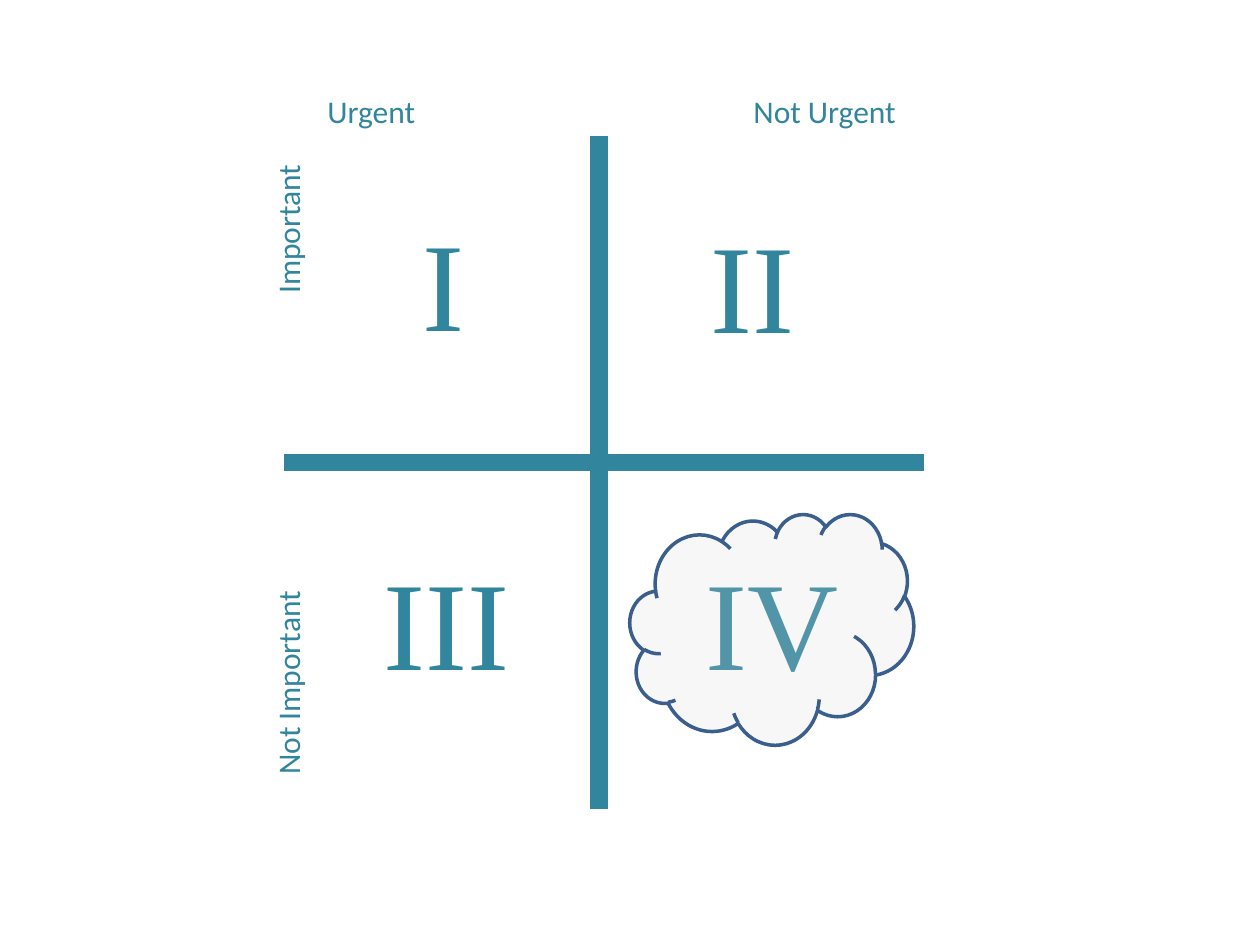
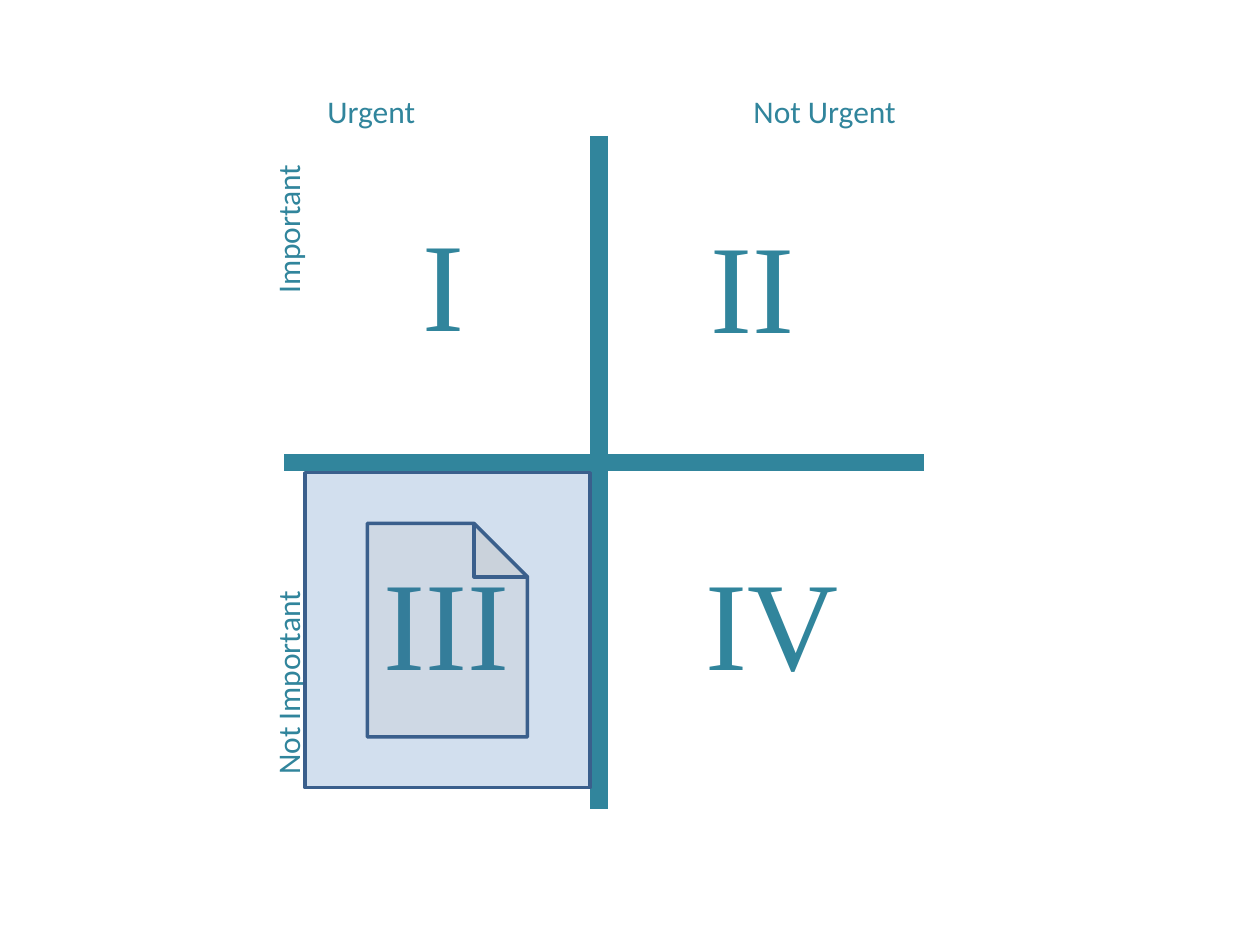
from lxml import etree
from pptx import Presentation
from pptx.dml.color import RGBColor
from pptx.enum.shapes import MSO_CONNECTOR, MSO_SHAPE
from pptx.enum.text import MSO_AUTO_SIZE
from pptx.oxml.ns import qn
from pptx.util import Cm, Pt

TEAL = "31859C"
NAVY = "3A5F8C"
GREY = "D9D9D9"
BLUE = "4F81BD"

LABEL_HEIGHT = 1.02
NUMERAL_HEIGHT = 3.33


def rgb(value):
    return RGBColor.from_string(value)


class MatrixDeck:
    """Draws urgency and importance matrices in one shared style."""

    label_font = "Calibri"
    numeral_font = "Times New Roman"

    def __init__(self):
        self.prs = Presentation()
        self.prs.slide_width = Cm(25.4)
        self.prs.slide_height = Cm(19.05)
        self.s = None

    def new_slide(self):
        self.s = self.prs.slides.add_slide(self.prs.slide_layouts[6])

    def axis(self, x1, y1, x2, y2):
        line = self.s.shapes.add_connector(
            MSO_CONNECTOR.STRAIGHT, Cm(x1), Cm(y1), Cm(x2), Cm(y2))
        line.line.color.rgb = rgb(TEAL)
        line.line.width = Pt(10)
        etree.SubElement(line._element.spPr, qn("a:effectLst"))

    def text(self, text, left, top, width, height, font, size, wrap=True):
        sp = self.s.shapes.add_textbox(Cm(left), Cm(top), Cm(width), Cm(height))
        tf = sp.text_frame
        tf.word_wrap = wrap
        tf.auto_size = MSO_AUTO_SIZE.SHAPE_TO_FIT_TEXT
        p = tf.paragraphs[0]
        p.text = text
        p.font.name = font
        p.font.size = Pt(size)
        p.font.color.rgb = rgb(TEAL)
        return sp

    def numeral(self, text, left, top, width, wrap=False):
        self.text(text, left, top, width, NUMERAL_HEIGHT,
                  self.numeral_font, 72, wrap)

    def axis_labels(self, first, second, left, top, width, tab, rotation=0):
        sp = self.text(f"{first}\t{second}", left, top, width, LABEL_HEIGHT,
                       self.label_font, 18)
        sp.rotation = rotation
        pPr = sp.text_frame.paragraphs[0]._p.get_or_add_pPr()
        tabs = etree.Element(qn("a:tabLst"))
        etree.SubElement(tabs, qn("a:tab"), pos=str(int(Cm(tab))), algn="l")
        pPr.insert(0, tabs)

    def highlight(self, kind, left, top, width, height, color, opacity):
        sp = self.s.shapes.add_shape(
            kind, Cm(left), Cm(top), Cm(width), Cm(height))
        sp.shadow.inherit = False
        sp.fill.solid()
        sp.fill.fore_color.rgb = rgb(color)
        clr = sp._element.spPr.find(qn("a:solidFill")).find(qn("a:srgbClr"))
        etree.SubElement(clr, qn("a:alpha"), val=str(opacity * 1000))
        sp.line.color.rgb = rgb(NAVY)
        sp.line.width = Pt(2)

    def matrix(self):
        self.new_slide()
        self.axis(12.07, 2.74, 12.07, 16.3)
        self.axis(18.62, 9.32, 5.72, 9.32)
        self.numeral("I", 8.26, 4.01, 1.47, wrap=True)
        self.numeral("II", 14.07, 4.06, 2.24)
        self.axis_labels("Urgent", "Not Urgent", 6.35, 1.73, 12.27, 8.59)
        self.axis_labels("Not Important", "Important", -0.97, 8.59, 13.54, 9.7,
                         rotation=270)
        self.numeral("III", 7.49, 10.85, 3.07)
        self.numeral("IV", 13.97, 10.85, 3.23)


def main():
    deck = MatrixDeck()
    deck.matrix()
    deck.highlight(MSO_SHAPE.CLOUD, 12.7, 10.36, 5.72, 4.65, GREY, 20)
    deck.matrix()
    deck.highlight(MSO_SHAPE.ACTION_BUTTON_DOCUMENT, 6.15, 9.53, 5.74, 6.35,
                   BLUE, 25)
    deck.prs.save("out.pptx")


if __name__ == "__main__":
    main()
